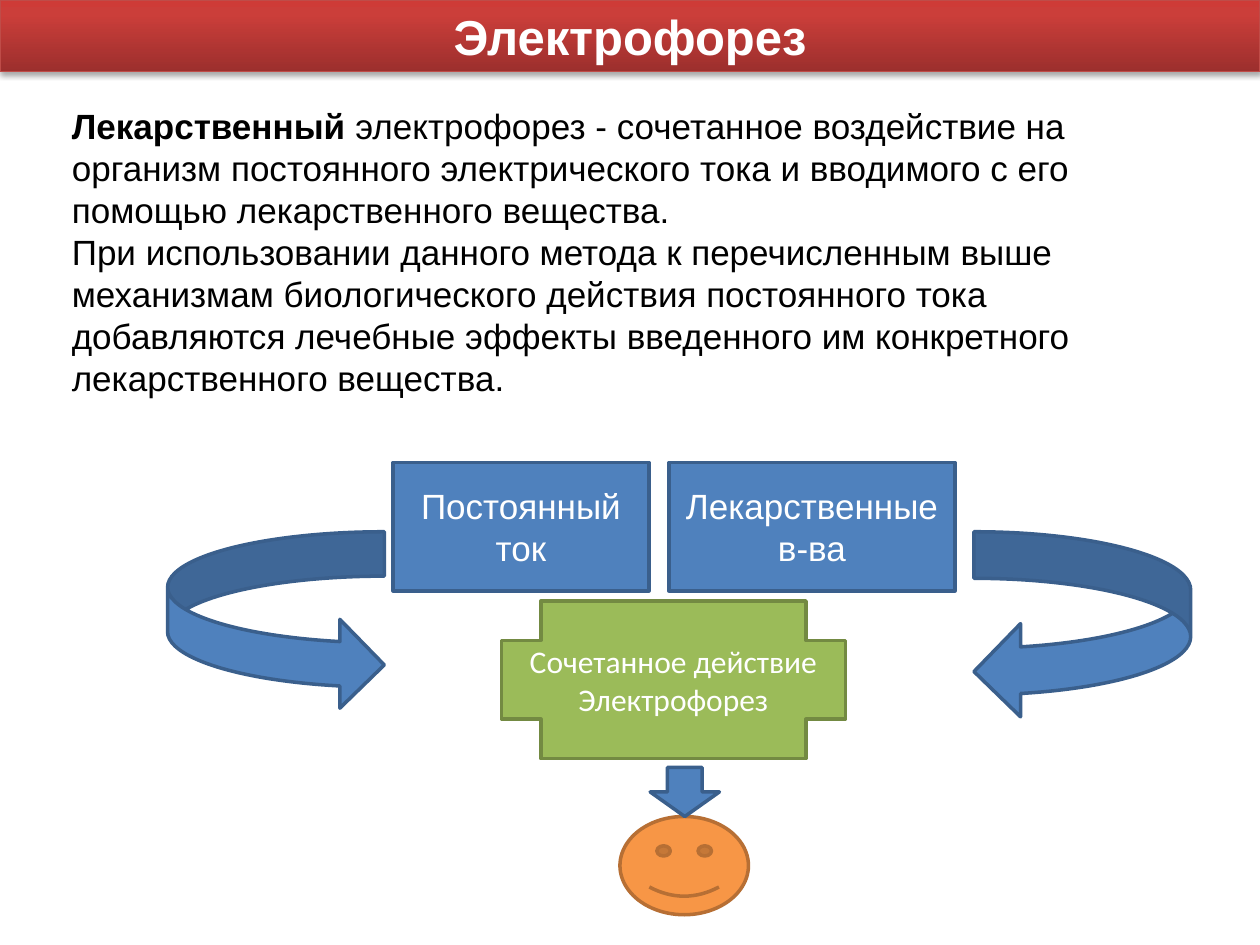
"""Build the electrophoresis slide: a title bar, a definition and a flow of shapes."""
from dataclasses import dataclass
from typing import Any

from pptx import Presentation
from pptx.dml.color import RGBColor as Rgb
from pptx.enum.shapes import MSO_SHAPE as Kind
from pptx.enum.text import MSO_ANCHOR as Anchor, MSO_AUTO_SIZE as Fit, PP_ALIGN as Align
from pptx.oxml import parse_xml
from pptx.oxml.ns import nsdecls
from pptx.util import Inches, Pt

COLS, ROWS = 100, 75
WIDTH, HEIGHT = Inches(10), Inches(7.5)


@dataclass(frozen=True)
class Theme:
    """Colours, fonts and type sizes."""
    blue: tuple = ("4F81BD", "3A5F8C")
    green: tuple = ("9BBB59", "738A42")
    orange: tuple = ("F79646", "B76F34")
    bar: tuple = ((0, "9C2F2D"), (80, "CB3E3A"), (100, "CE3B37"))
    edge: str = "BF4C48"
    light: str = "FFFFFF"
    dark: str = "000000"
    main: str = "Arial"
    alt: str = "Calibri"
    head: int = 28
    text: int = 20
    note: int = 18


@dataclass(frozen=True)
class Box:
    """A place on the grid, in columns and rows."""
    col: float
    row: float
    wide: float
    high: float


@dataclass(frozen=True)
class Node:
    """A preset shape with its colours and lines of text."""
    kind: Any
    box: Box
    tone: tuple
    lines: tuple = ()
    font: str = Theme.main
    size: int = Theme.text


THEME = Theme()
NODES = (
    Node(Kind.CROSS, Box(39.8, 47.7, 27.3, 12.5), THEME.green,
         ("Сочетанное действие", "Электрофорез"), THEME.alt, THEME.note),
    Node(Kind.SMILEY_FACE, Box(49.2, 64.8, 10.2, 7.8), THEME.orange),
    Node(Kind.DOWN_ARROW, Box(51.6, 60.9, 5.5, 3.9), THEME.blue),
    Node(Kind.RECTANGLE, Box(31.2, 36.7, 20.3, 10.2), THEME.blue, ("Постоянный ток",)),
    Node(Kind.RECTANGLE, Box(53.1, 36.7, 22.7, 10.2), THEME.blue, ("Лекарственные в-ва",)),
    Node(Kind.CURVED_RIGHT_ARROW, Box(13.3, 42.2, 17.2, 14.1), THEME.blue),
    Node(Kind.CURVED_LEFT_ARROW, Box(77.3, 42.2, 17.2, 14.8), THEME.blue),
)
BODY = (
    (("Лекарственный ", True),
     ("электрофорез - сочетанное воздействие на организм постоянного электрического "
      "тока и вводимого с его помощью лекарственного вещества.", False)),
    (("При использовании данного метода к перечисленным выше механизмам биологического "
      "действия постоянного тока добавляются лечебные эффекты введенного им конкретного "
      "лекарственного вещества.", False),),
)


def apply(item: Any, form: dict) -> None:
    """Set each attribute named in the format."""
    for key, val in form.items():
        setattr(item, key, val)


def spot(box: Box) -> dict:
    """Turn a grid box into slide lengths."""
    return {"left": round(WIDTH * box.col / COLS), "top": round(HEIGHT * box.row / ROWS),
            "width": round(WIDTH * box.wide / COLS), "height": round(HEIGHT * box.high / ROWS)}


def write(para: Any, text: str, font: str, size: int, tint: str, bold: bool = False) -> None:
    """Add one formatted run to a paragraph."""
    run = para.add_run()
    run.text = text
    apply(run.font, {"name": font, "size": Pt(size), "bold": bold})
    run.font.color.rgb = Rgb.from_string(tint)


def rule(shape: Any, tint: str, width: float) -> None:
    """Outline a shape."""
    shape.line.color.rgb = Rgb.from_string(tint)
    shape.line.width = Pt(width)


def paras(frame: Any, count: int) -> list:
    """Give a text frame the wanted number of paragraphs."""
    return [frame.paragraphs[0]] + [frame.add_paragraph() for _ in range(count - 1)]


def draw_head(shape: Any) -> None:
    """Format the title as a shaded bar."""
    apply(shape, spot(Box(0, 0, 100, 5.7)))
    stops = "".join(f'<a:gs pos="{pos * 1000}"><a:srgbClr val="{tint}"/></a:gs>'
                    for pos, tint in THEME.bar)
    props = shape._element.spPr
    props.append(parse_xml(f'<a:gradFill {nsdecls("a")}><a:gsLst>{stops}</a:gsLst>'
                           '<a:lin ang="16200000" scaled="0"/></a:gradFill>'))
    rule(shape, THEME.edge, 0.75)
    props.append(parse_xml(
        f'<a:effectLst {nsdecls("a")}><a:outerShdw blurRad="{Pt(3.1)}" dist="{Pt(1.8)}" '
        f'dir="5400000" rotWithShape="0"><a:srgbClr val="{THEME.dark}">'
        '<a:alpha val="35000"/></a:srgbClr></a:outerShdw></a:effectLst>'))
    frame = shape.text_frame
    apply(frame, {"auto_size": Fit.NONE, "word_wrap": True, "vertical_anchor": Anchor.MIDDLE})
    para = frame.paragraphs[0]
    para.alignment = Align.CENTER
    write(para, "Электрофорез", THEME.main, THEME.head, THEME.light, True)


def draw_body(shape: Any) -> None:
    """Format the body as plain paragraphs."""
    apply(shape, spot(Box(4.7, 7.8, 89.8, 24.6)))
    frame = shape.text_frame
    apply(frame, {"auto_size": Fit.NONE, "word_wrap": True, "vertical_anchor": Anchor.TOP})
    for para, runs in zip(paras(frame, len(BODY)), BODY):
        apply(para, {"alignment": Align.LEFT, "space_before": Pt(0)})
        props = para._p.get_or_add_pPr()
        props.set("marL", "0")
        props.set("indent", "0")
        props.append(parse_xml(f'<a:buNone {nsdecls("a")}/>'))
        for text, bold in runs:
            write(para, text, THEME.main, THEME.text, THEME.dark, bold)


def draw_node(slide: Any, node: Node) -> None:
    """Draw one preset shape with its text."""
    shape = slide.shapes.add_shape(node.kind, *spot(node.box).values())
    shape.shadow.inherit = False
    fill, edge = node.tone
    shape.fill.solid()
    shape.fill.fore_color.rgb = Rgb.from_string(fill)
    rule(shape, edge, 2)
    if node.lines:
        frame = shape.text_frame
        apply(frame, {"word_wrap": True, "vertical_anchor": Anchor.MIDDLE})
        for para, text in zip(paras(frame, len(node.lines)), node.lines):
            para.alignment = Align.CENTER
            write(para, text, node.font, node.size, THEME.light)


def main() -> None:
    """Build and save the slide."""
    deck = Presentation()
    apply(deck, {"slide_width": WIDTH, "slide_height": HEIGHT})
    slide = deck.slides.add_slide(deck.slide_layouts[1])
    draw_head(slide.shapes.title)
    draw_body(slide.placeholders[1])
    for node in NODES:
        draw_node(slide, node)
    deck.save("out.pptx")


if __name__ == "__main__":
    main()
